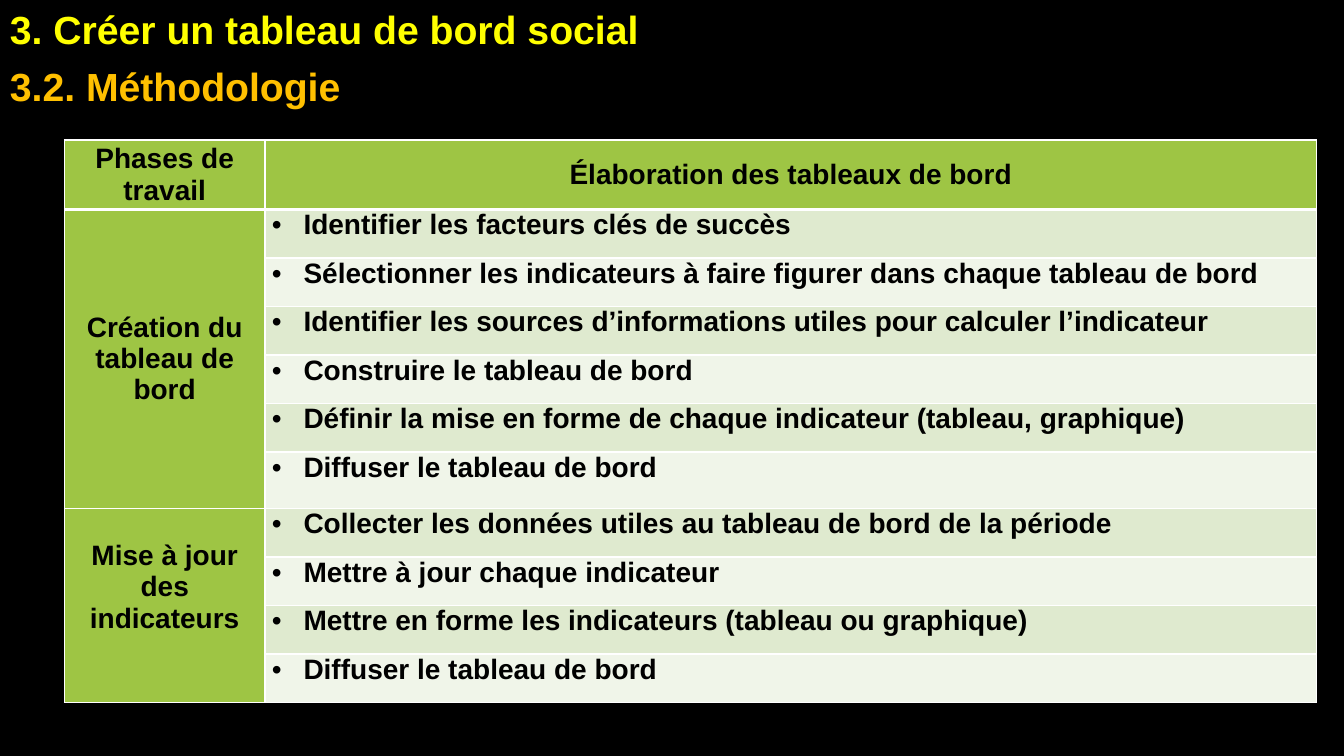
from dataclasses import dataclass

from lxml import etree
from pptx import Presentation
from pptx import util as u
from pptx.dml.color import RGBColor
from pptx.enum import text as t
from pptx.oxml import ns

COLORS = {
    "background": "000000",
    "title": "FFFF00",
    "subtitle": "FFC000",
    "ink": "000000",
    "border": "FFFFFF",
    "green": "9EC544",
    "dark_band": "DFEACF",
    "light_band": "F0F5E9",
}
FONT = "Arial"
ROW_HEIGHT = 34.65
HEADER_HEIGHT = 49.7
COLUMN_WIDTHS = (143.3, 751.3)
BULLET_INDENT = 22.5


@dataclass
class Phase:
    name: str
    steps: list[str]
    step_spacing: float = 0
    last_row_height: float = ROW_HEIGHT
    bottom_margin: float = 0


PHASES = [
    Phase("Création du tableau de bord", [
        "Identifier les facteurs clés de succès",
        "Sélectionner les indicateurs à faire figurer dans chaque tableau de bord",
        "Identifier les sources d’informations utiles pour calculer l’indicateur",
        "Construire le tableau de bord",
        "Définir la mise en forme de chaque indicateur (tableau, graphique)",
        "Diffuser le tableau de bord",
    ], last_row_height=40.3),
    Phase("Mise à jour des indicateurs", [
        "Collecter les données utiles au tableau de bord de la période",
        "Mettre à jour chaque indicateur",
        "Mettre en forme les indicateurs (tableau ou graphique)",
        "Diffuser le tableau de bord",
    ], step_spacing=2, bottom_margin=26),
]


def write(frame, content: str, *, size: float = 20, color: str = "ink",
          align=None, before: float = 0, after: float = 0,
          bullet: bool = False) -> None:
    paragraph = frame.paragraphs[0]
    paragraph.alignment = align
    paragraph.space_before, paragraph.space_after = u.Pt(before), u.Pt(after)
    run = paragraph.add_run()
    run.text = content
    run.font.name, run.font.size, run.font.bold = FONT, u.Pt(size), True
    run.font.color.rgb = RGBColor.from_string(COLORS[color])
    if bullet:
        properties = paragraph._p.get_or_add_pPr()
        properties.set("marL", str(u.Pt(BULLET_INDENT)))
        properties.set("indent", str(-u.Pt(BULLET_INDENT)))
        etree.SubElement(properties, ns.qn("a:buFont"), typeface=FONT)
        etree.SubElement(properties, ns.qn("a:buChar"), char="•")


def add_heading(slide, content: str, color: str, top: float, width: float,
                height: float, *, wrap: bool, before: float, after: float) -> None:
    box = slide.shapes.add_textbox(0, u.Pt(top), u.Pt(width), u.Pt(height))
    box.text_frame.word_wrap = wrap
    write(box.text_frame, content, size=28, color=color, before=before, after=after)


def style_cell(cell, fill: str, *, top: float = 1, bottom: float = 1,
               middle: bool = False, bottom_margin: float = 0) -> None:
    properties = cell._tc.get_or_add_tcPr()
    for side, width in (("L", 1), ("R", 1), ("T", top), ("B", bottom)):
        line = etree.SubElement(properties, ns.qn(f"a:ln{side}"), w=str(u.Pt(width)))
        solid = etree.SubElement(line, ns.qn("a:solidFill"))
        etree.SubElement(solid, ns.qn("a:srgbClr"), val=COLORS["border"])
    cell.fill.solid()
    cell.fill.fore_color.rgb = RGBColor.from_string(COLORS[fill])
    cell.margin_left = cell.margin_right = u.Pt(5)
    cell.margin_top, cell.margin_bottom = 0, u.Pt(bottom_margin)
    cell.vertical_anchor = t.MSO_ANCHOR.MIDDLE if middle else t.MSO_ANCHOR.TOP


def add_phase_table(slide) -> None:
    heights = [HEADER_HEIGHT]
    for phase in PHASES:
        heights += [ROW_HEIGHT] * (len(phase.steps) - 1) + [phase.last_row_height]
    table = slide.shapes.add_table(
        len(heights), len(COLUMN_WIDTHS), u.Pt(46), u.Pt(100),
        u.Pt(sum(COLUMN_WIDTHS)), u.Pt(sum(heights))).table
    table.first_row = table.horz_banding = False
    for column, width in zip(table.columns, COLUMN_WIDTHS):
        column.width = u.Pt(width)
    for row, height in zip(table.rows, heights):
        row.height = u.Pt(height)

    # Header row
    for column, label in enumerate(("Phases de travail", "Élaboration des tableaux de bord")):
        header = table.cell(0, column)
        style_cell(header, "green", bottom=3, middle=True)
        write(header.text_frame, label, align=t.PP_ALIGN.CENTER, before=3, after=3)

    # Phases, each spanning its steps
    first = 1
    for phase in PHASES:
        for row, step in enumerate(phase.steps, first):
            top = 3 if row == 1 else 1
            style_cell(table.cell(row, 0), "green", top=top, middle=True,
                       bottom_margin=phase.bottom_margin if row == first else 0)
            step_cell = table.cell(row, 1)
            style_cell(step_cell, "dark_band" if row % 2 else "light_band", top=top)
            write(step_cell.text_frame, step, align=t.PP_ALIGN.JUSTIFY, bullet=True,
                  before=phase.step_spacing, after=phase.step_spacing)
        phase_cell = table.cell(first, 0)
        write(phase_cell.text_frame, phase.name, align=t.PP_ALIGN.CENTER, before=2, after=2)
        first += len(phase.steps)
        phase_cell.merge(table.cell(first - 1, 0))


def main() -> None:
    deck = Presentation()
    deck.slide_width, deck.slide_height = u.Pt(960), u.Pt(540)
    slide = deck.slides.add_slide(deck.slide_layouts[6])
    slide.background.fill.solid()
    slide.background.fill.fore_color.rgb = RGBColor.from_string(COLORS["background"])

    add_heading(slide, "3. Créer un tableau de bord social", "title",
                0, 787.7, 78.5, wrap=True, before=0, after=3)
    add_phase_table(slide)
    add_heading(slide, "3.2. Méthodologie", "subtitle",
                41, 253.5, 41, wrap=False, before=12, after=6)
    deck.save("out.pptx")


if __name__ == "__main__":
    main()
